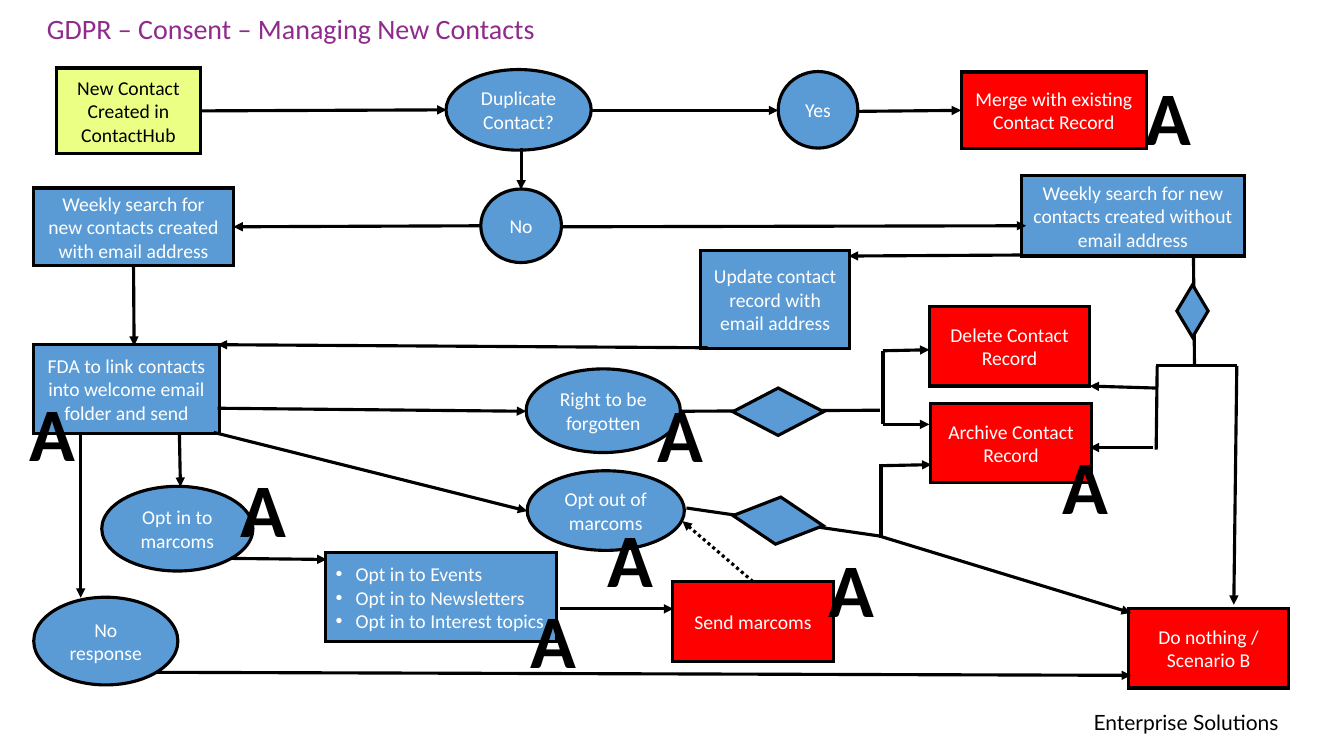
from dataclasses import dataclass
from typing import Optional

from lxml import etree
from pptx import Presentation, util as u
from pptx.dml.color import RGBColor
from pptx.enum import dml, shapes, text
from pptx.oxml import ns

# Grid: ten columns and ten rows to the inch
CELL = u.Inches(0.1)
COLUMNS, ROWS = 133.33, 75
BLUE, RED, LIME = "5B9BD5", "FF0000", "EBFF85"
BLACK, WHITE, PURPLE = "000000", "FFFFFF", "8F2B8C"
RECT = shapes.MSO_SHAPE.RECTANGLE
OVAL = shapes.MSO_SHAPE.OVAL
DECISION = shapes.MSO_SHAPE.FLOWCHART_DECISION
TOP, LEFT, BOTTOM, RIGHT = range(4)


@dataclass
class Step:
    key: str
    label: str
    column: float
    row: float
    width: float
    height: float
    fill: str = BLUE
    kind: int = RECT
    colour: str = WHITE
    rotation: float = 0
    bullets: bool = False


@dataclass
class Link:
    x1: float
    y1: float
    x2: float
    y2: float
    arrow: bool = True
    dotted: bool = False
    begin: Optional[tuple[str, int]] = None
    end: Optional[tuple[str, int]] = None


STEPS = [
    Step("new", "New Contact Created in ContactHub", 5.6, 6.75, 14.3, 8.5, LIME, colour=BLACK),
    Step("duplicate", "Duplicate Contact?", 44.25, 6.9, 14.4, 8, kind=OVAL),
    Step("yes", "Yes", 77.2, 7.1, 7.9, 7.6, kind=OVAL),
    Step("no", "No", 47.7, 18.75, 8, 7.3, kind=OVAL),
    Step("with email", "Weekly search for new contacts created with email address",
         3.35, 18.65, 19.8, 7.7),
    Step("welcome", "FDA to link contacts into welcome email folder and send",
         3.35, 34.2, 18.4, 8.8),
    Step("without email", "Weekly search for new contacts created without email address",
         101.35, 17.4, 22.1, 8),
    Step("opt in", "Opt in to marcoms", 10.1, 48.25, 15, 8.4, kind=OVAL),
    Step("opt out", "Opt out of marcoms", 52.3, 46.7, 15.6, 7.9, kind=OVAL),
    Step("forgotten", "Right to be forgotten", 52.2, 36.6, 15.3, 8.3, kind=OVAL),
    Step("no response", "No response", 3.35, 59.25, 14.3, 8.7, kind=OVAL),
    Step("archive", "Archive Contact Record", 92.35, 40, 15.9, 7.9, RED),
    Step("merge", "Merge with existing Contact Record", 95.35, 7.15, 18.4, 7.6, RED),
    Step("delete", "Delete Contact Record", 92.2, 30.4, 15.9, 7.9, RED),
    Step("update", "Update contact record with email address", 69.5, 24.85, 14.8, 9.7),
    Step("nothing", "Do nothing / Scenario B", 111.95, 60.35, 15.9, 7.9, RED),
    Step("topics", "Opt in to Events\nOpt in to Newsletters\nOpt in to Interest topics",
         32.3, 54.85, 22.9, 8.8, bullets=True),
    Step("send", "Send marcoms", 66.75, 57.7, 15.9, 7.9, RED),
]

LINKS = [
    # Duplicate check
    Link(19.9, 11, 44.3, 10.9, begin=("new", RIGHT)),
    Link(58.6, 10.95, 77.2, 10.95),
    Link(85.2, 11.05, 95.4, 10.95, end=("merge", LEFT)),
    Link(51.7, 14.7, 51.7, 18.8),
    # Weekly searches
    Link(55.6, 22.5, 101.8, 22.4),
    Link(47.7, 22.4, 23.2, 22.4, end=("with email", RIGHT)),
    Link(13.3, 26.4, 13.3, 34.3, begin=("with email", BOTTOM)),
    Link(101.3, 25.3, 84.2, 25.4),
    Link(70.2, 34.5, 21.6, 34.2),
    # Replies to the welcome email
    Link(17.8, 43.1, 17.9, 48.3),
    Link(21.6, 40.5, 52.2, 40.8),
    Link(21.2, 42.9, 52.3, 50.7),
    Link(8, 43.1, 8, 59.3),
    Link(15.6, 66.7, 112.2, 67),
    Link(23, 55.4, 32.4, 55.5),
    Link(55.6, 60.4, 66.8, 60.4),
    Link(74.7, 57.7, 67.7, 51.7, dotted=True, begin=("send", TOP)),
    # Right to be forgotten
    Link(67.5, 40.8, 87.3, 40.7, arrow=False),
    Link(87.6, 34.8, 87.6, 42.1, arrow=False),
    Link(87.6, 34.8, 92.2, 34.7),
    Link(87.6, 42.1, 92.2, 42.1),
    # Opt out
    Link(68.1, 50.4, 87.4, 53.2, arrow=False),
    Link(87.4, 46, 87.4, 53.4, arrow=False),
    Link(87.5, 46.2, 92.4, 46.1),
    Link(87.3, 53.2, 112.2, 60.8),
    # Contacts without email
    Link(118.4, 25.4, 118.5, 36.3, arrow=False),
    Link(114.7, 36.3, 122.7, 36.3, arrow=False),
    Link(114.8, 36.3, 114.7, 44.6, arrow=False),
    Link(114.8, 38.5, 108.1, 38.3),
    Link(114.4, 44.4, 108.1, 44.4),
    Link(122.7, 36.3, 122.4, 60),
]

DECISIONS = [
    Step("forget decision", "", 72.7, 38.5, 9, 4.7, kind=DECISION),
    Step("opt out decision", "", 72.7, 49.3, 9, 4.7, kind=DECISION, rotation=6.4),
    Step("no email decision", "", 115.7, 29.3, 5.2, 3.1, kind=DECISION, rotation=90),
]

# Top left corners of the "A" markers
MARKERS = [(22.9, 45.3), (64.2, 37.9), (59.3, 50.3), (81.2, 53.3),
           (104.4, 43.1), (112.7, 6.4), (51.6, 58.3), (1.9, 37.8)]


def grid(*cells: float) -> list[int]:
    return [round(cell * CELL) for cell in cells]


def rgb(colour: str) -> RGBColor:
    return RGBColor.from_string(colour)


def style(font, size: float, colour: str, name: str = "Calibri") -> None:
    font.size, font.name = u.Pt(size), name
    font.color.rgb = rgb(colour)


def draw_line(line) -> None:
    line.color.rgb = rgb(BLACK)
    line.width = u.Pt(2.25)


def draw_step(slide, step: Step):
    shape = slide.shapes.add_shape(
        step.kind, *grid(step.column, step.row, step.width, step.height))
    shape.rotation = step.rotation
    shape.shadow.inherit = False
    shape.fill.solid()
    shape.fill.fore_color.rgb = rgb(step.fill)
    draw_line(shape.line)
    outline = shape._element.spPr.find(ns.qn("a:ln"))
    etree.SubElement(outline, ns.qn("a:miter"), lim="800000")
    if step.label:
        write_label(shape.text_frame, step)
    return shape


def write_label(frame, step: Step) -> None:
    frame.word_wrap = True
    frame.vertical_anchor = text.MSO_ANCHOR.MIDDLE
    frame.text = step.label
    for paragraph in frame.paragraphs:
        paragraph.alignment = text.PP_ALIGN.LEFT if step.bullets else text.PP_ALIGN.CENTER
        if step.bullets:
            properties = paragraph._p.get_or_add_pPr()
            properties.set("marL", str(2 * CELL))
            properties.set("indent", str(-2 * CELL))
            etree.SubElement(properties, ns.qn("a:buFont"), typeface="Arial")
            etree.SubElement(properties, ns.qn("a:buChar"), char="•")
        style(paragraph.runs[0].font, 14, step.colour)


def draw_link(slide, link: Link, steps: dict) -> None:
    connector = slide.shapes.add_connector(
        shapes.MSO_CONNECTOR.STRAIGHT, *grid(link.x1, link.y1, link.x2, link.y2))
    if link.begin:
        connector.begin_connect(steps[link.begin[0]], link.begin[1])
    if link.end:
        connector.end_connect(steps[link.end[0]], link.end[1])
    draw_line(connector.line)
    if link.dotted:
        connector.line.dash_style = dml.MSO_LINE.ROUND_DOT
    properties = connector._element.spPr
    if link.arrow:
        etree.SubElement(properties.find(ns.qn("a:ln")), ns.qn("a:tailEnd"), type="triangle")
    etree.SubElement(properties, ns.qn("a:effectLst"))


def draw_text(slide, words: str, place: tuple, size: float, colour: str,
              name: str = "Calibri"):
    box = slide.shapes.add_textbox(*grid(*place))
    box.text_frame.word_wrap = True
    box.text_frame.text = words
    style(box.text_frame.paragraphs[0].runs[0].font, size, colour, name)
    return box.text_frame


def draw_marker(slide, column: float, row: float) -> None:
    paragraph = draw_text(slide, "A", (column, row, 4.7, 10.1), 54, BLACK).paragraphs[0]
    paragraph.alignment = text.PP_ALIGN.CENTER
    run = paragraph.runs[0]
    run.font.bold = True
    outline = etree.Element(ns.qn("a:ln"), w=str(u.Pt(0.75)))
    fill = etree.SubElement(outline, ns.qn("a:solidFill"))
    etree.SubElement(fill, ns.qn("a:srgbClr"), val=WHITE)
    run._r.get_or_add_rPr().insert(0, outline)


def main() -> None:
    presentation = Presentation()
    presentation.slide_width, presentation.slide_height = grid(COLUMNS, ROWS)
    slide = presentation.slides.add_slide(presentation.slide_layouts[6])

    # Flow chart
    steps = {step.key: draw_step(slide, step) for step in STEPS}
    for link in LINKS:
        draw_link(slide, link, steps)
    for decision in DECISIONS:
        draw_step(slide, decision)
    for column, row in MARKERS:
        draw_marker(slide, column, row)

    # Title and footer
    title = draw_text(slide, "GDPR – Consent – Managing New Contacts",
                      (4.35, 1.75, 69.5, 3.1), 20, PURPLE)
    title.margin_left = title.margin_right = title.margin_top = title.margin_bottom = u.Inches(0.03)
    title.vertical_anchor = text.MSO_ANCHOR.BOTTOM
    title.paragraphs[0].line_spacing = 0.9
    draw_text(slide, "Enterprise Solutions", (107.5, 69.9, 25, 3.5), 15, BLACK, "Lato")

    presentation.save("out.pptx")


if __name__ == "__main__":
    main()
